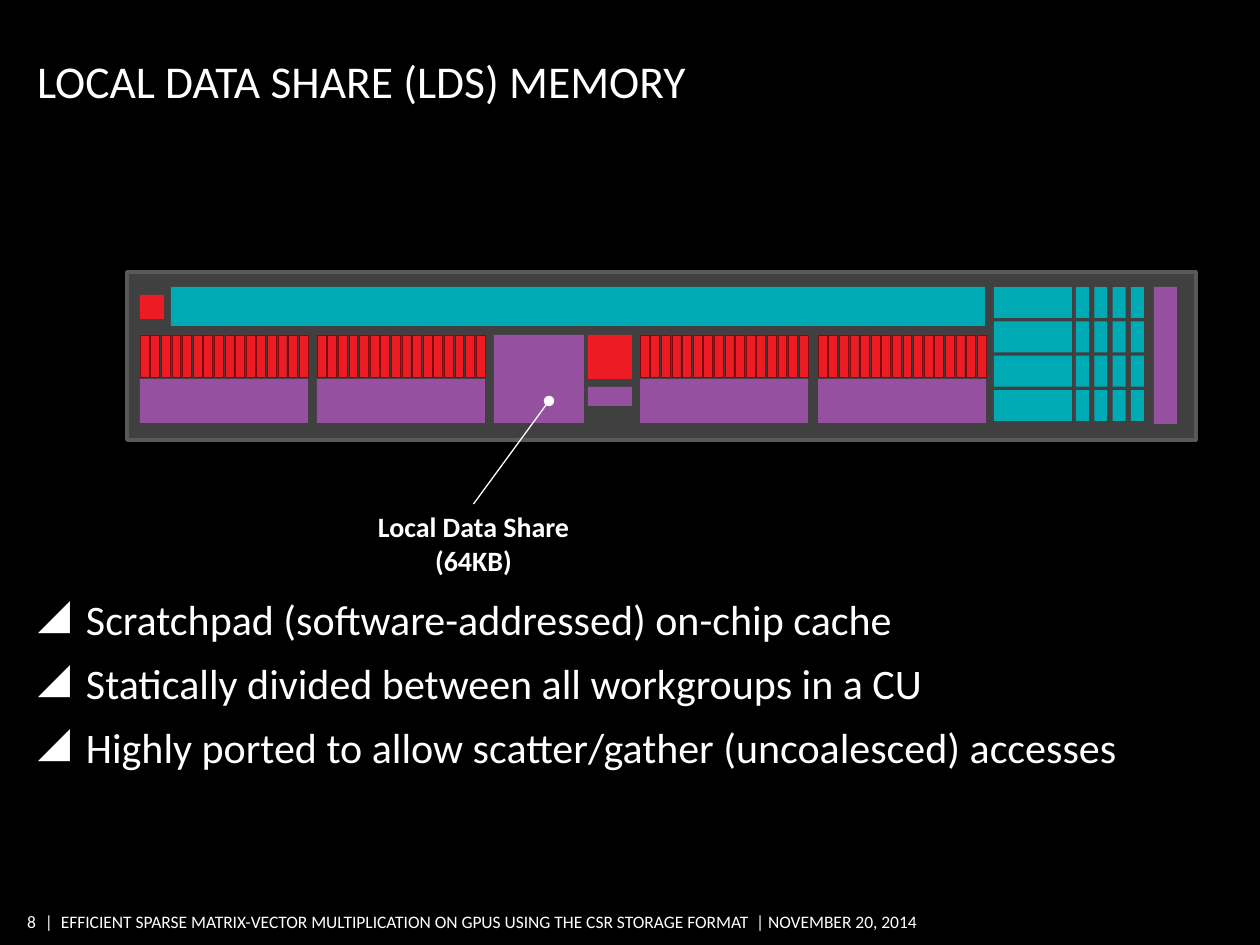
from lxml.etree import SubElement
from pptx import Presentation
from pptx.dml.color import RGBColor
from pptx.enum.shapes import MSO_CONNECTOR as Connector, MSO_SHAPE as Shape
from pptx.enum.text import MSO_ANCHOR as Anchor, PP_ALIGN as Align
from pptx.oxml.ns import qn
from pptx.util import Pt

EMU_PER_PX = 914400 / 126
FONT = "Calibri"
COLORS = {
    "background": "000000", "text": "FFFFFF", "chip": "404040", "chip_edge": "595959",
    "memory": "9650A0", "control": "00AAB5", "compute": "ED1C24", "compute_edge": "7B0A0E",
}
BULLETS = [
    "Scratchpad (software-addressed) on-chip cache",
    "Statically divided between all workgroups in a CU",
    "Highly ported to allow scatter/gather (uncoalesced) accesses",
]
FOOTER = ("|  EFFICIENT SPARSE MATRIX-VECTOR MULTIPLICATION ON GPUS USING "
          "THE CSR STORAGE FORMAT  | NOVEMBER 20, 2014")


def px(length):
    return round(length * EMU_PER_PX)


def color(name):
    return RGBColor.from_string(COLORS[name])


def write(shape, text, size, align=Align.LEFT, anchor=Anchor.TOP, bold=False,
          margins=(0, 6, 0, 6), wrap=True):
    """Fill a shape with text; margins are left, top, right, bottom."""
    frame = shape.text_frame
    frame.text = text
    frame.word_wrap = wrap
    frame.vertical_anchor = anchor
    frame.margin_left, frame.margin_top, frame.margin_right, frame.margin_bottom = map(px, margins)
    for para in frame.paragraphs:
        para.alignment = align
        for span in para.runs:
            span.font.name, span.font.size, span.font.bold = FONT, Pt(size), bold
            span.font.color.rgb = color("text")
    return frame


def add_text(shapes, box, text, size, **style):
    shape = shapes.add_textbox(*map(px, box))
    write(shape, text, size, **style)
    return shape


def add_block(shapes, box, fill, edge=None, edge_width=0.25):
    block = shapes.add_shape(Shape.RECTANGLE, *map(px, box))
    block.shadow.inherit = False
    block.fill.solid()
    block.fill.fore_color.rgb = color(fill)
    if edge:
        block.line.color.rgb = color(edge)
        block.line.width = Pt(edge_width)
    else:
        block.line.fill.background()


def add_title(page, box):
    title = page.shapes.title
    title.left, title.top, title.width, title.height = map(px, box)
    write(title, "LOCAL DATA SHARE (LDS) MEMORY", 26, anchor=Anchor.BOTTOM, margins=(0, 6, 0, 0))


def add_simd_unit(shapes, box):
    """A row of 16 lanes above its register file."""
    left, top, width, height = box
    lanes, lane_width = 16, 9
    pitch = (width - lane_width) / (lanes - 1)
    add_block(shapes, (left, top + 44, width, height - 44), "memory")
    for lane in range(lanes):
        add_block(shapes, (left + lane * pitch, top, lane_width, 42), "compute", "compute_edge")


def add_cache_grid(shapes, box):
    """Four rows, each with one wide cell and four narrow ones."""
    left, top, width, height = box
    cell_height, narrow = 31, 13
    row_pitch = (height - cell_height) / 3
    column_pitch = (width - 82 - narrow) / 3
    for row in range(4):
        y = top + row * row_pitch
        add_block(shapes, (left, y, 78, cell_height), "control")
        for column in range(4):
            add_block(shapes, (left + 82 + column * column_pitch, y, narrow, cell_height), "control")


def add_compute_unit(page, box):
    left, top, width, height = box
    shapes = page.shapes.add_group_shape().shapes
    add_block(shapes, box, "chip", "chip_edge", 2)
    for x, y, w, h, fill in [
        (367, 63, 90, 88, "memory"),
        (44, 15, 814, 39, "control"),
        (13, 23, 24, 24, "compute"),
        (461, 63, 44, 44, "compute"),
        (461, 115, 44, 19, "memory"),
        (1027, 15, 23, 137, "memory"),
    ]:
        add_block(shapes, (left + x, top + y, w, h), fill)
    add_cache_grid(shapes, (left + 867, top + 15, 150, 134))
    for x in (13, 190, 513, 691):
        add_simd_unit(shapes, (left + x, top + 63, 168, 88))


def add_callout(page, box, target):
    """A label whose leader runs from its top to a dot on the target."""
    shapes = page.shapes
    label = add_text(shapes, box, "Local Data Share\n(64KB)", 16, align=Align.CENTER,
                     bold=True, margins=(13, 6, 13, 6), wrap=False)
    leader = shapes.add_connector(Connector.STRAIGHT, 0, 0, *map(px, target))
    leader.begin_connect(label, 0)
    leader.line.color.rgb = color("text")
    leader.line.width = Pt(0.75)
    SubElement(leader.line._get_or_add_ln(), qn("a:tailEnd"), type="oval")
    SubElement(leader._element.spPr, qn("a:effectLst"))


def add_bullets(page, box):
    body = add_text(page.shapes, box, "\n".join(BULLETS), 24)
    for index, para in enumerate(body.text_frame.paragraphs):
        props = para._p.get_or_add_pPr()
        props.set("marL", str(px(48)))
        props.set("indent", str(-px(48)))
        para.space_before = Pt(8 if index else 0)
        bullet_color = SubElement(props, qn("a:buClr"))
        SubElement(bullet_color, qn("a:srgbClr"), val=COLORS["text"])
        SubElement(props, qn("a:buChar"), char="◢")


def add_footer(page, box):
    left, top, width, height = box
    style = {"anchor": Anchor.MIDDLE, "margins": (0, 5, 0, 5), "wrap": False}
    add_text(page.shapes, (left, top, 20, height), "8", 10, align=Align.RIGHT, **style)
    add_text(page.shapes, (left + 29, top, width - 29, height), FOOTER, 10, **style)


def main():
    deck = Presentation()
    deck.slide_width, deck.slide_height = px(1260), px(945)
    page = deck.slides.add_slide(deck.slide_layouts[5])
    page.background.fill.solid()
    page.background.fill.fore_color.rgb = color("background")
    add_title(page, (37, 43, 1033, 65))
    add_compute_unit(page, (127, 272, 1069, 168))
    add_callout(page, (364, 504, 219, 81), (549, 401))
    add_bullets(page, (38, 587, 1184, 283))
    add_footer(page, (16, 905, 921, 33))
    deck.save("out.pptx")


if __name__ == "__main__":
    main()
